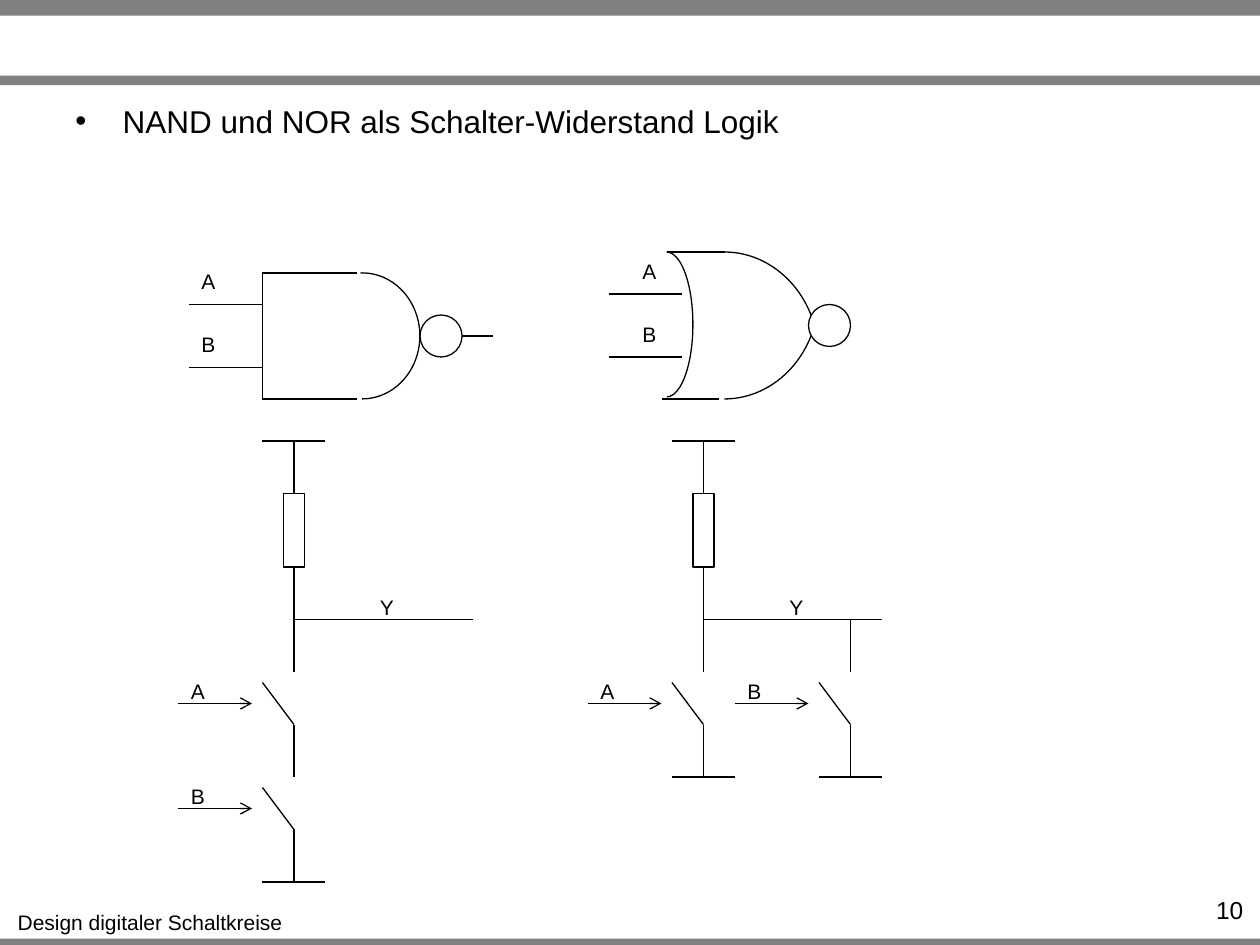
"""Build a slide showing NAND and NOR as gates and as switch-resistor circuits."""
from dataclasses import dataclass
from typing import Optional, Union

from lxml import etree
from pptx import Presentation
from pptx.dml.color import RGBColor
from pptx.enum.shapes import MSO_CONNECTOR, MSO_SHAPE
from pptx.enum.text import MSO_AUTO_SIZE, PP_ALIGN
from pptx.oxml.ns import qn
from pptx.shapes.autoshape import Shape
from pptx.shapes.connector import Connector
from pptx.shapes.shapetree import GroupShapes, SlideShapes
from pptx.util import Emu, Pt

Shapes = Union[SlideShapes, GroupShapes]

STRAIGHT = MSO_CONNECTOR.STRAIGHT
RECTANGLE, OVAL, ARC = MSO_SHAPE.RECTANGLE, MSO_SHAPE.OVAL, MSO_SHAPE.ARC
LEFT, CENTER, RIGHT = PP_ALIGN.LEFT, PP_ALIGN.CENTER, PP_ALIGN.RIGHT
FIT_TEXT = MSO_AUTO_SIZE.SHAPE_TO_FIT_TEXT
BLACK = RGBColor(0x00, 0x00, 0x00)
WHITE = RGBColor(0xFF, 0xFF, 0xFF)
GRAY = RGBColor(0x80, 0x80, 0x80)
FONT = "Arial"
EMU_PER_PX = 7620
LINE_WIDTH = Pt(0.75)
ARC_START = 162


@dataclass(frozen=True)
class Box:
    left: int
    top: int
    width: int
    height: int

    def emu(self) -> tuple[Emu, Emu, Emu, Emu]:
        return px(self.left), px(self.top), px(self.width), px(self.height)


@dataclass(frozen=True)
class Wire:
    x1: int
    y1: int
    x2: int
    y2: int


@dataclass(frozen=True)
class Arc:
    box: Box
    end: float
    flipped: bool = False


@dataclass(frozen=True)
class Input:
    name: str
    x: int
    y: int
    label_shift: int = 0


@dataclass(frozen=True)
class Gate:
    inputs: list[Input]
    wires: list[Wire]
    arcs: list[Arc]
    bubble: Box


@dataclass(frozen=True)
class Switch:
    name: str
    x: int
    y: int
    grounded: bool = True


@dataclass(frozen=True)
class Circuit:
    x: int
    switches: list[Switch]


BARS = [Box(0, 894, 1200, 9), Box(0, 0, 1200, 15), Box(0, 72, 1200, 9)]
NOR = Gate(
    [Input("A", 580, 280, 20), Input("B", 580, 340, 20)],
    [Wire(690, 240, 635, 240), Wire(685, 380, 630, 380)],
    [Arc(Box(610, 240, 50, 138), 53.88), Arc(Box(600, 240, 180, 200), 201.69),
     Arc(Box(600, 180, 180, 200), 201.69, True)],
    Box(770, 290, 40, 40),
)
NAND = Gate(
    [Input("A", 180, 290), Input("B", 180, 350)],
    [Wire(250, 260, 250, 380), Wire(250, 260, 340, 260),
     Wire(250, 380, 340, 380), Wire(400, 320, 470, 320)],
    [Arc(Box(290, 260, 110, 120), 54.9, True)],
    Box(400, 300, 40, 40),
)
CIRCUITS = [
    Circuit(280, [Switch("A", 280, 690, False), Switch("B", 280, 790)]),
    Circuit(670, [Switch("A", 670, 690), Switch("B", 810, 690)]),
]


def px(length: int) -> Emu:
    return Emu(length * EMU_PER_PX)


def add_wire(shapes: Shapes, wire: Wire, arrow: bool = False) -> Connector:
    connector = shapes.add_connector(
        STRAIGHT, px(wire.x1), px(wire.y1), px(wire.x2), px(wire.y2))
    connector.line.color.rgb = BLACK
    connector.line.width = LINE_WIDTH
    if arrow:
        etree.SubElement(connector.line._get_or_add_ln(), qn("a:tailEnd"), type="arrow")
    etree.SubElement(connector._element.spPr, qn("a:effectLst"))
    return connector


def add_figure(shapes: Shapes, kind: MSO_SHAPE, box: Box, fill: Optional[RGBColor] = None,
               outlined: bool = True) -> Shape:
    shape = shapes.add_shape(kind, *box.emu())
    shape.shadow.inherit = False
    if fill is None:
        shape.fill.background()
    else:
        shape.fill.solid()
        shape.fill.fore_color.rgb = fill
    if outlined:
        shape.line.color.rgb = BLACK
        shape.line.width = LINE_WIDTH
    else:
        shape.line.fill.background()
    return shape


def add_arc(shapes: Shapes, arc: Arc) -> None:
    shape = add_figure(shapes, ARC, arc.box)
    shape.adjustments[0] = ARC_START
    shape.adjustments[1] = arc.end
    if arc.flipped:
        shape._element.spPr.get_or_add_xfrm().set("flipV", "1")


def add_text(shapes: Shapes, text: str, box: Box, size: int = 12, align: PP_ALIGN = CENTER,
             wrap: bool = False, bullet: bool = False) -> None:
    frame = shapes.add_textbox(*box.emu()).text_frame
    frame.word_wrap = wrap
    if not wrap:
        frame.auto_size = FIT_TEXT
    paragraph = frame.paragraphs[0]
    paragraph.alignment = align
    if bullet:
        properties = paragraph._p.get_or_add_pPr()
        properties.set("marL", str(px(45)))
        properties.set("indent", str(px(-45)))
        etree.SubElement(properties, qn("a:buFont"), typeface=FONT)
        etree.SubElement(properties, qn("a:buChar"), char="•")
    run = paragraph.add_run()
    run.text = text
    run.font.name = FONT
    run.font.size = Pt(size)
    run.font.color.rgb = BLACK


def add_label(shapes: Shapes, text: str, left: int, top: int) -> None:
    add_text(shapes, text, Box(left, top, 37, 36))


def add_gate(shapes: Shapes, gate: Gate) -> None:
    for pin in gate.inputs:
        add_wire(shapes, Wire(pin.x, pin.y, pin.x + 70, pin.y))
        add_label(shapes, pin.name, pin.x + pin.label_shift, pin.y - 40)
    for arc in gate.arcs:
        add_arc(shapes, arc)
    for wire in gate.wires:
        add_wire(shapes, wire)
    add_figure(shapes, OVAL, gate.bubble, WHITE)


def add_rail(shapes: Shapes, x: int, y: int) -> None:
    add_wire(shapes, Wire(x + 30, y, x - 30, y))


def add_switch(shapes: Shapes, switch: Switch) -> None:
    x, y = switch.x, switch.y
    add_wire(shapes, Wire(x, y + 50, x, y))
    add_wire(shapes, Wire(x, y, x - 30, y - 40))
    add_wire(shapes, Wire(x - 110, y - 20, x - 40, y - 20), arrow=True)
    add_label(shapes, switch.name, x - 110, y - 50)
    if switch.grounded:
        add_rail(shapes, x, y + 50)


def add_circuit(shapes: Shapes, circuit: Circuit) -> None:
    x = circuit.x
    add_rail(shapes, x, 420)
    resistor = add_figure(shapes, RECTANGLE, Box(x - 10, 470, 20, 70))
    add_wire(shapes, Wire(x, 470, x, 420)).begin_connect(resistor, 0)
    add_wire(shapes, Wire(x, 590, x, 540)).end_connect(resistor, 2)
    add_wire(shapes, Wire(x, 590, x + 170, 590))
    add_label(shapes, "Y", x + 70, 560)
    for branch in sorted({switch.x for switch in circuit.switches}):
        add_wire(shapes, Wire(branch, 640, branch, 590))
    for switch in circuit.switches:
        add_switch(shapes, switch)


def main() -> None:
    presentation = Presentation()
    presentation.slide_width, presentation.slide_height = px(1200), px(900)
    shapes = presentation.slides.add_slide(presentation.slide_layouts[6]).shapes
    for bar in BARS:
        add_figure(shapes, RECTANGLE, bar, GRAY, outlined=False)
    add_text(shapes, "Design digitaler Schaltkreise", Box(4, 860, 278, 36))
    add_text(shapes, "NAND und NOR als Schalter-Widerstand Logik",
             Box(60, 91, 1080, 299), 18, LEFT, wrap=True, bullet=True)
    add_text(shapes, "10", Box(1092, 847, 104, 29), 14, RIGHT, wrap=True)
    for gate in (NOR, NAND):
        add_gate(shapes.add_group_shape().shapes, gate)
    for circuit in CIRCUITS:
        add_circuit(shapes, circuit)
    presentation.save("out.pptx")


if __name__ == "__main__":
    main()
